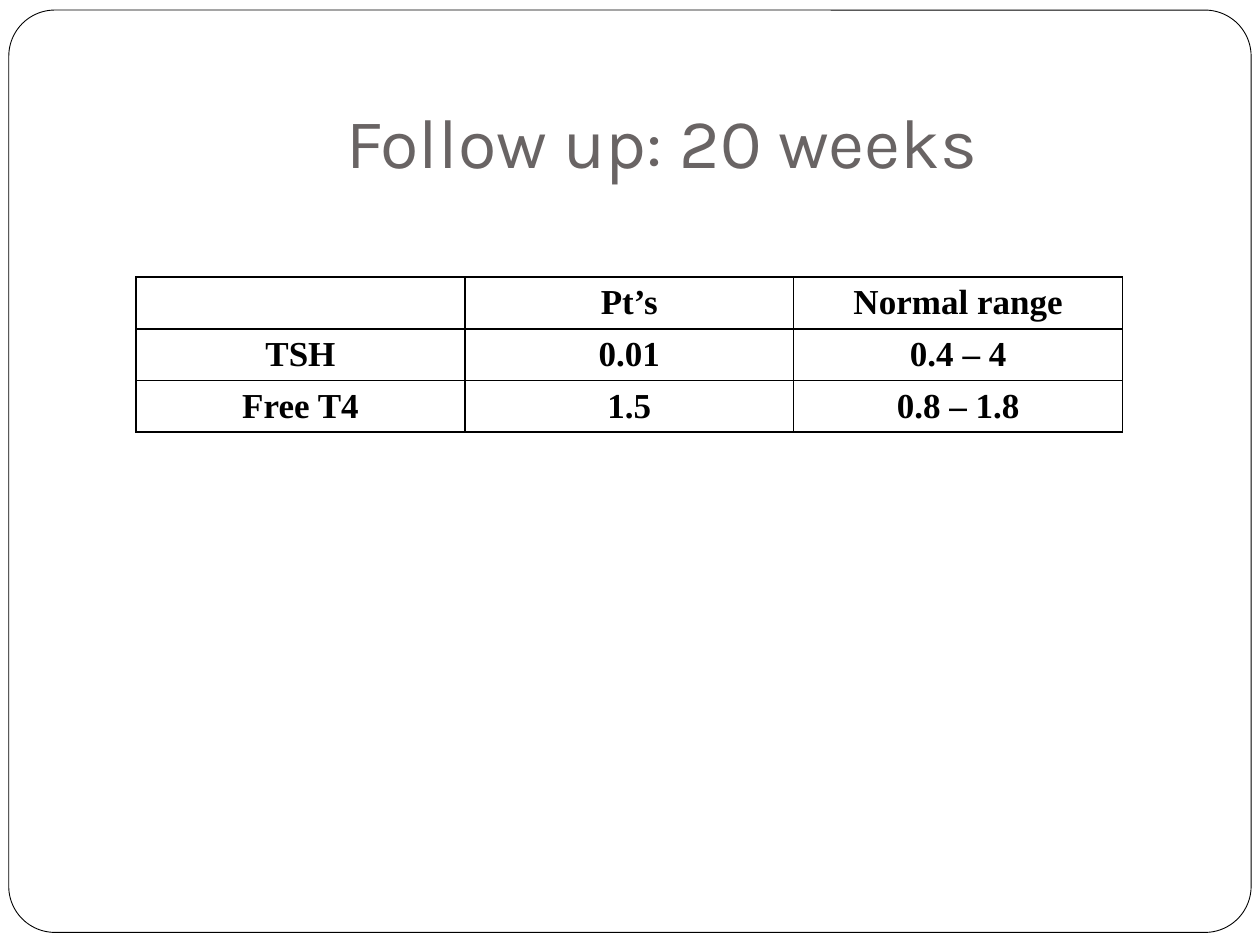
from lxml.etree import SubElement
from pptx import Presentation
from pptx.dml.color import RGBColor
from pptx.enum.shapes import MSO_SHAPE as Shape
from pptx.enum.text import MSO_ANCHOR as Anchor, PP_ALIGN as Align
from pptx.oxml.ns import qn
from pptx.util import Inches, Pt

BLACK, WHITE, GRAY = "000000", "FFFFFF", "696464"
LAB_RESULTS = [
    ["", "Pt’s", "Normal range"],
    ["TSH", "0.01", "0.4 – 4"],
    ["Free T4", "1.5", "0.8 – 1.8"],
]


def color(value):
    return RGBColor.from_string(value)


def format_paragraph(paragraph, font_name, size, text_color, bold=False):
    paragraph.alignment = Align.CENTER
    font = paragraph.font
    font.name, font.size, font.bold = font_name, Pt(size), bold
    font.color.rgb = color(text_color)


def add_frame(slide):
    """Add the rounded page border behind everything else."""
    frame = slide.shapes.add_shape(
        Shape.ROUNDED_RECTANGLE, Inches(0.07), Inches(0.08), Inches(9.86), Inches(7.32)
    )
    frame.adjustments[0] = 0.05
    frame.shadow.inherit = False
    frame.fill.solid()
    frame.fill.fore_color.rgb = color(WHITE)
    frame.line.color.rgb = color(BLACK)
    frame.line.width = Pt(0.5)
    slide.shapes.title.element.addprevious(frame.element)


def set_title(slide, text):
    title = slide.shapes.title
    title.left, title.top = Inches(1), Inches(0.3)
    title.width, title.height = Inches(8.5), Inches(1.25)
    text_frame = title.text_frame
    text_frame.text = text
    text_frame.vertical_anchor = Anchor.BOTTOM
    text_frame.margin_bottom = Inches(0.1)
    format_paragraph(text_frame.paragraphs[0], "Karla", 40, GRAY)


def set_borders(cell, line_color, width):
    properties = cell._tc.get_or_add_tcPr()
    for position, side in enumerate(("lnL", "lnR", "lnT", "lnB")):
        line = SubElement(properties, qn(f"a:{side}"), w=str(Pt(width)))
        fill = SubElement(line, qn("a:solidFill"))
        SubElement(fill, qn("a:srgbClr"), val=line_color)
        properties.insert(position, line)


def add_results_table(slide, rows):
    column_width, row_height = Inches(2.61), Inches(0.41)
    table = slide.shapes.add_table(
        len(rows), len(rows[0]), Inches(1.08), Inches(2.2),
        column_width * len(rows[0]), row_height * len(rows),
    ).table
    table.first_row = table.horz_banding = False
    for row_index, row in enumerate(rows):
        for column_index, text in enumerate(row):
            cell = table.cell(row_index, column_index)
            cell.text = text
            cell.fill.background()
            set_borders(cell, BLACK, 1)
            format_paragraph(
                cell.text_frame.paragraphs[0], "Times New Roman", 20, BLACK, bold=True
            )


def main():
    presentation = Presentation()
    presentation.slide_width, presentation.slide_height = Inches(10), Inches(7.5)
    slide = presentation.slides.add_slide(presentation.slide_layouts[5])
    add_frame(slide)
    set_title(slide, "Follow up: 20 weeks")
    add_results_table(slide, LAB_RESULTS)
    presentation.save("out.pptx")


if __name__ == "__main__":
    main()
